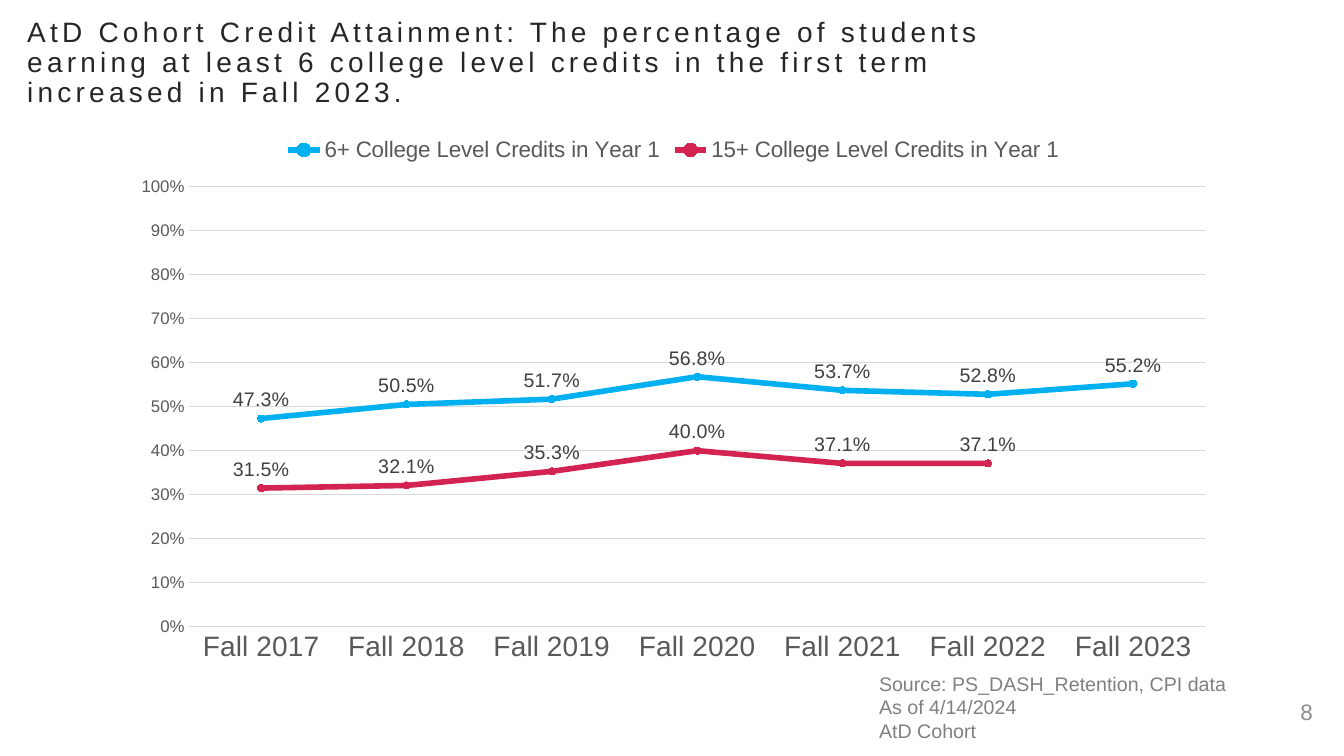
from dataclasses import dataclass

from lxml import etree
from pptx import Presentation
from pptx.chart.data import CategoryChartData
from pptx.dml.color import RGBColor
from pptx.enum.chart import (XL_CHART_TYPE, XL_LABEL_POSITION as LabelPosition,
                             XL_LEGEND_POSITION as LegendPosition,
                             XL_MARKER_STYLE as MarkerStyle, XL_TICK_MARK as TickMark)
from pptx.enum.text import MSO_ANCHOR as Anchor, MSO_AUTO_SIZE as AutoSize, PP_ALIGN as Align
from pptx.oxml.ns import qn
from pptx.util import Inches, Pt


@dataclass(frozen=True)
class Theme:
    font: str = "Arial"
    title: tuple = (20, "262626")
    source: tuple = (14, "808080")
    page_number: tuple = (16, "8C8C8C")
    chart: tuple = (10, "000000")
    category_axis: tuple = (20, "595959")
    value_axis: tuple = (12, "595959")
    legend: tuple = (16, "595959")
    data_label: tuple = (14, "404040")
    grid: str = "D9D9D9"
    blue: str = "00B0F0"
    crimson: str = "D32351"
    marker_red: str = "A31D22"


THEME = Theme()
CREDIT_TERMS = [f"Fall {year}" for year in range(2017, 2024)]
CREDIT_SERIES = [
    ("6+ College Level Credits in Year 1", THEME.blue, THEME.blue,
     (0.473, 0.505, 0.517, 0.568, 0.537, 0.528, 0.552)),
    ("15+ College Level Credits in Year 1", THEME.crimson, THEME.marker_red,
     (0.315, 0.321, 0.353, 0.4, 0.371, 0.371, None)),
]


def set_all(target, **values):
    for name, value in values.items():
        setattr(target, name, value)


class SlideBuilder:
    def __init__(self, presentation, theme):
        self.theme = theme
        self.slide = presentation.slides.add_slide(presentation.slide_layouts[5])

    def style_font(self, font, style):
        size, color = style
        set_all(font, name=self.theme.font, size=Pt(size), bold=False)
        font.color.rgb = RGBColor.from_string(color)

    def style_line(self, line, color, width):
        line.width = Pt(width)
        line.color.rgb = RGBColor.from_string(color)

    def fill_text(self, shape, lines, style, anchor, align=Align.LEFT):
        frame = shape.text_frame
        set_all(frame, text="\n".join(lines), word_wrap=True,
                auto_size=AutoSize.NONE, vertical_anchor=anchor)
        for paragraph in frame.paragraphs:
            paragraph.alignment = align
            self.style_font(paragraph.runs[0].font, style)

    def title(self, text, box, spacing):
        """Fill the title placeholder; spacing is the letter spacing in points."""
        shape = self.slide.shapes.title
        set_all(shape, **dict(zip(("left", "top", "width", "height"), map(Inches, box))))
        self.fill_text(shape, [text], self.theme.title, Anchor.MIDDLE)
        paragraph = shape.text_frame.paragraphs[0]
        set_all(paragraph, line_spacing=0.9, space_before=Pt(0))
        paragraph.runs[0].font._element.set("spc", str(spacing * 100))

    def text(self, lines, box, style, anchor, align=Align.LEFT):
        shape = self.slide.shapes.add_textbox(*map(Inches, box))
        self.fill_text(shape, lines, style, anchor, align)

    def line_chart(self, categories, series_rows, box, plot_box):
        data = CategoryChartData(number_format="0.0%")
        data.categories = categories
        for name, _, _, values in series_rows:
            data.add_series(name, values)
        chart = self.slide.shapes.add_chart(
            XL_CHART_TYPE.LINE_MARKERS, *map(Inches, box), data).chart
        self.style_font(chart.font, self.theme.chart)
        set_all(chart, has_title=False, has_legend=True)
        set_all(chart.legend, position=LegendPosition.TOP, include_in_layout=False)
        self.style_font(chart.legend.font, self.theme.legend)
        chart.plots[0].vary_by_categories = False
        self.style_axes(chart)
        for series, (_, color, marker_color, _) in zip(chart.plots[0].series, series_rows):
            self.style_series(series, color, marker_color)
        self.place_plot(chart, box, plot_box)

    def style_axes(self, chart):
        no_ticks = {"major_tick_mark": TickMark.NONE, "minor_tick_mark": TickMark.NONE}
        category_axis, value_axis = chart.category_axis, chart.value_axis
        set_all(category_axis, **no_ticks)
        set_all(value_axis, minimum_scale=0, maximum_scale=1, major_unit=0.1,
                has_major_gridlines=True, **no_ticks)
        set_all(value_axis.tick_labels, number_format="0%", number_format_is_linked=False)
        self.style_font(category_axis.tick_labels.font, self.theme.category_axis)
        self.style_font(value_axis.tick_labels.font, self.theme.value_axis)
        self.style_line(category_axis.format.line, self.theme.grid, 0.75)
        self.style_line(value_axis.major_gridlines.format.line, self.theme.grid, 0.75)
        value_axis.format.line.fill.background()

    def style_series(self, series, color, marker_color):
        series.smooth = False
        self.style_line(series.format.line, color, 4)
        marker = series.marker
        set_all(marker, style=MarkerStyle.CIRCLE, size=5)
        marker.format.fill.solid()
        marker.format.fill.fore_color.rgb = RGBColor.from_string(marker_color)
        self.style_line(marker.format.line, color, 0.75)
        labels = series.data_labels
        set_all(labels, show_value=True, position=LabelPosition.ABOVE,
                number_format="0.0%", number_format_is_linked=False)
        self.style_font(labels.font, self.theme.data_label)

    def place_plot(self, chart, box, plot_box):
        """Fix the inner plot area; plot_box is in inches from the chart's corner."""
        plot_area = chart._chartSpace.chart.plotArea
        for old_layout in plot_area.findall(qn("c:layout")):
            plot_area.remove(old_layout)
        layout = etree.Element(qn("c:layout"))
        plot_area.insert(0, layout)
        manual = etree.SubElement(layout, qn("c:manualLayout"))
        width, height = box[2:]
        fractions = [length / whole for length, whole in zip(plot_box, (width, height) * 2)]
        settings = {"layoutTarget": "inner", "xMode": "edge", "yMode": "edge",
                    **dict(zip("xywh", fractions))}
        for name, value in settings.items():
            etree.SubElement(manual, qn(f"c:{name}")).set("val", str(value))


def main():
    presentation = Presentation()
    set_all(presentation, slide_width=Inches(13.33), slide_height=Inches(7.5))
    builder = SlideBuilder(presentation, THEME)
    builder.text(["8"], (12.5, 6.79, 0.62, 0.45), THEME.page_number, Anchor.BOTTOM, Align.RIGHT)
    builder.title("AtD Cohort Credit Attainment: The percentage of students earning at least "
                  "6 college level credits in the first term increased in Fall 2023.",
                  (0.17, 0.44, 10.13, 0.38), spacing=3)
    builder.line_chart(CREDIT_TERMS, CREDIT_SERIES, box=(1.18, 1.25, 11, 5.43),
                       plot_box=(0.69, 0.6, 10.09, 4.37))
    builder.text(["Source: PS_DASH_Retention, CPI data", "As of 4/14/2024", "AtD Cohort"],
                 (8.62, 6.61, 5.23, 0.81), THEME.source, Anchor.MIDDLE)
    presentation.save("out.pptx")


if __name__ == "__main__":
    main()
